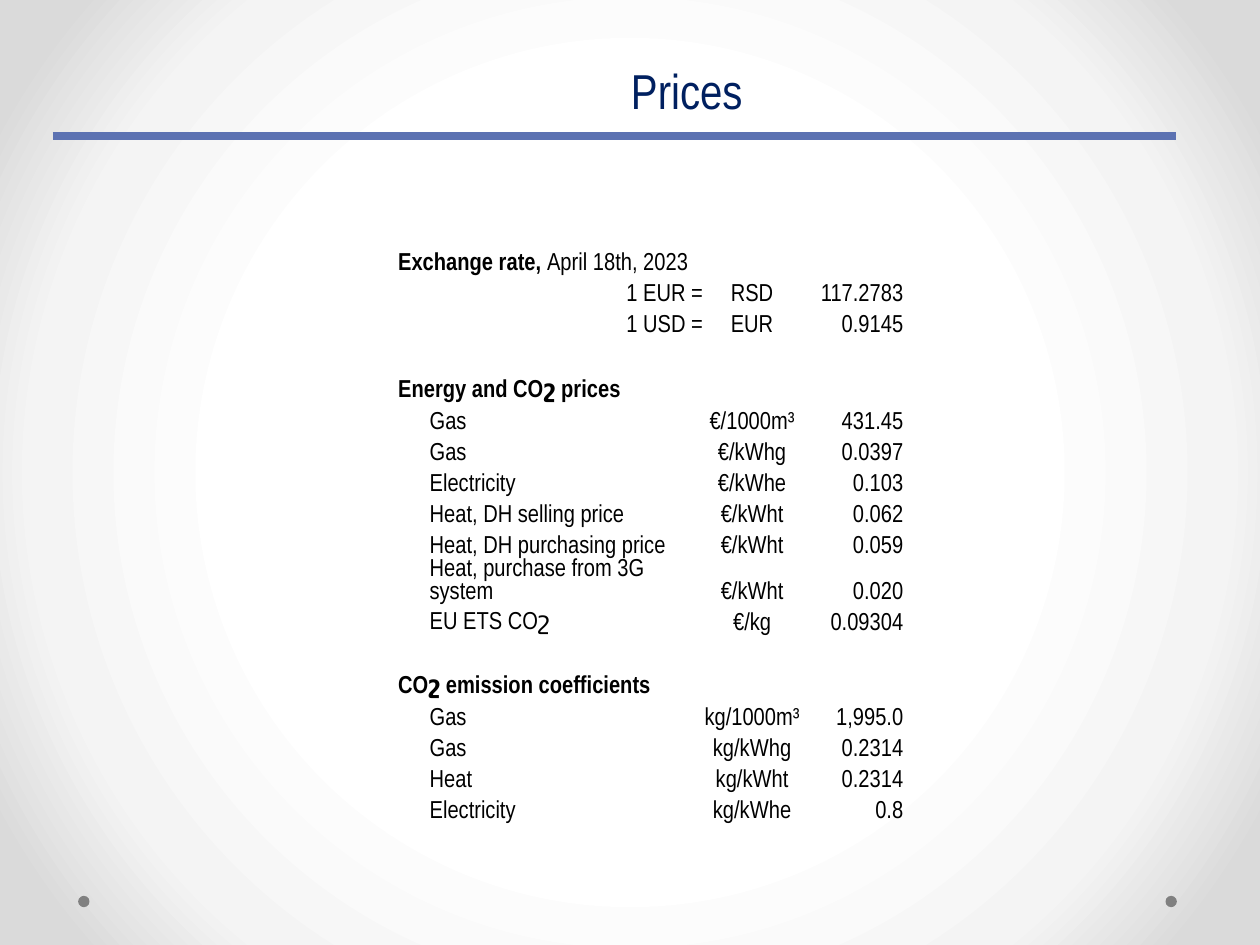
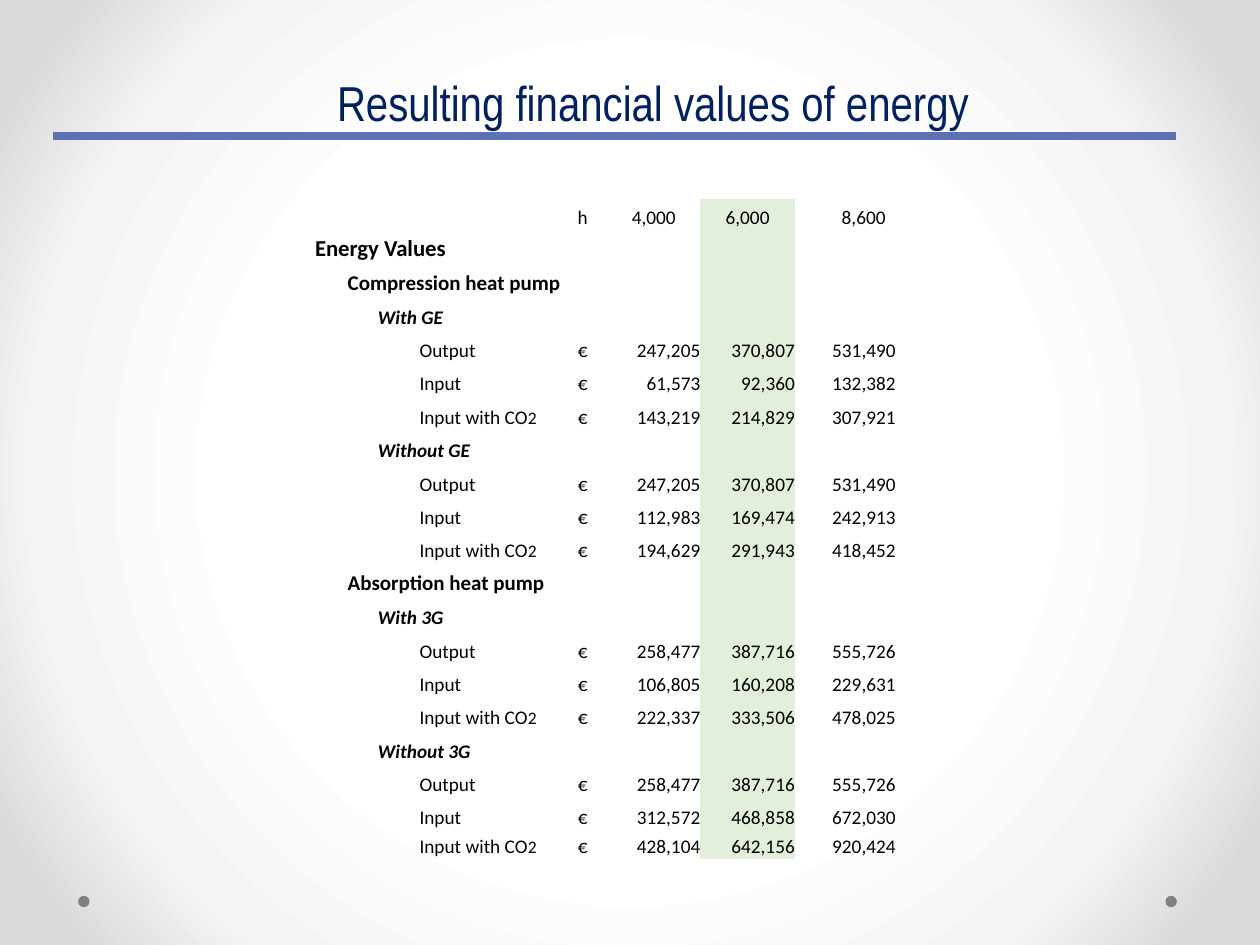
from lxml import etree
from pptx import Presentation
from pptx import util as u
from pptx.dml import color
from pptx.enum import shapes, text
from pptx.oxml import ns, parse_xml

NARROW, CALIBRI = "Arial Narrow", "Calibri"
NAVY, BLUE, GREY, BLACK, GREEN = "002060", "5C72B2", "808080", "000000", "E2EFDA"
BACKDROP = [(0, "FFFFFF"), (50, "FFFFFF"), (76, "F4F4F4"), (92, "DADADA"), (100, "DADADA")]
NO_TABLE_STYLE = "{2D5ABB26-0587-4C30-8999-92F81FD0307C}"
LEFT, CENTER, RIGHT = text.PP_ALIGN.LEFT, text.PP_ALIGN.CENTER, text.PP_ALIGN.RIGHT


def rgb(value):
    return color.RGBColor.from_string(value)


class SlideBuilder:
    """Hold the shared style and the slide being built."""

    def __init__(self):
        self.deck = Presentation()
        self.deck.slide_width, self.deck.slide_height = u.Inches(10), u.Inches(7.5)
        self.page = self.table = None
        self.font, self.size = NARROW, 14
        self.backdrop()

    def backdrop(self):
        master = self.deck.slide_master
        master.background.fill.solid()
        solid = master.element.xpath(".//p:bgPr/a:solidFill")[0]
        stops = "".join(f'<a:gs pos="{place * 1000}"><a:srgbClr val="{shade}"/></a:gs>'
                        for place, shade in BACKDROP)
        gradient = parse_xml(
            f'<a:gradFill {ns.nsdecls("a")} rotWithShape="1"><a:gsLst>{stops}</a:gsLst>'
            '<a:path path="circle"><a:fillToRect l="50000" t="50000" r="50000" b="50000"/>'
            '</a:path></a:gradFill>')
        solid.getparent().replace(solid, gradient)

    def start(self, heading, left, top, width, height):
        self.page = self.deck.slides.add_slide(self.deck.slide_layouts[5])
        for dot_left in (9.25, 0.62):
            self.dot(dot_left, 7.11, 0.09)
        self.title(heading, left, top, width, height)

    def dot(self, left, top, size):
        dot = self.page.shapes.add_shape(shapes.MSO_SHAPE.OVAL, u.Inches(left), u.Inches(top),
                                         u.Inches(size), u.Inches(size))
        dot.shadow.inherit = False
        dot.fill.solid()
        dot.fill.fore_color.rgb = rgb(GREY)
        dot.line.fill.background()

    def title(self, heading, left, top, width, height):
        box = self.page.shapes.title
        box.left, box.top = u.Inches(left), u.Inches(top)
        box.width, box.height = u.Inches(width), u.Inches(height)
        frame = box.text_frame
        frame.text = heading
        frame.auto_size = text.MSO_AUTO_SIZE.NONE
        frame.vertical_anchor = text.MSO_ANCHOR.BOTTOM
        para = frame.paragraphs[0]
        para.alignment, para.line_spacing = CENTER, u.Pt(58)
        self.style(para.runs[0], NARROW, 28, shade=NAVY)

    def rule(self):
        line = self.page.shapes.add_connector(shapes.MSO_CONNECTOR.STRAIGHT, u.Inches(0.42),
                                              u.Inches(1.08), u.Inches(9.33), u.Inches(1.08))
        line.line.color.rgb, line.line.width = rgb(BLUE), u.Pt(4.5)
        etree.SubElement(line.element.spPr, ns.qn("a:effectLst"))

    def style(self, span, font, size, bold=False, italic=False, shade=BLACK):
        span.font.name, span.font.size = font, u.Pt(size)
        span.font.bold, span.font.italic = bold, italic
        span.font.color.rgb = rgb(shade)

    def grid(self, left, top, height, widths, row_count, special_rows, font, size):
        self.font, self.size = font, size
        frame = self.page.shapes.add_table(row_count, len(widths), u.Inches(left), u.Inches(top),
                                           u.Inches(sum(widths)), u.Inches(height))
        frame.element.xpath(".//a:tableStyleId")[0].text = NO_TABLE_STYLE
        self.table = frame.table
        self.table.first_row = self.table.horz_banding = False
        for column, width in zip(self.table.columns, widths):
            column.width = u.Inches(width)
        shared = (height - sum(special_rows.values())) / (row_count - len(special_rows))
        for index, row in enumerate(self.table.rows):
            row.height = u.Inches(special_rows.get(index, shared))
            for cell in row.cells:
                cell.margin_left = cell.margin_right = cell.margin_top = cell.margin_bottom = 0
                cell.vertical_anchor = text.MSO_ANCHOR.BOTTOM
                cell.fill.background()
                para = cell.text_frame.paragraphs[0]
                etree.SubElement(para._p, ns.qn("a:endParaRPr"), sz=str(size * 100))

    def entry(self, row, column, parts, align=LEFT, columns=1):
        cell = self.table.cell(row, column)
        if columns > 1:
            cell.merge(self.table.cell(row, column + columns - 1))
        para = cell.text_frame.paragraphs[0]
        para.alignment = align
        for words, look in [(parts, {})] if isinstance(parts, str) else parts:
            span = para.add_run()
            span.text = words
            self.style(span, **{"font": self.font, "size": self.size, **look})
        return cell

    def shade_column(self, column):
        for row in range(len(self.table.rows)):
            fill = self.table.cell(row, column).fill
            fill.solid()
            fill.fore_color.rgb = rgb(GREEN)


BOLD = {"bold": True}
BOLD_SUBSCRIPT = {"bold": True, "font": CALIBRI}

PRICE_ROWS = [
    ("heading", [("Exchange rate, ", BOLD), ("April 18th, 2023", {})]),
    ("rate", "1 EUR =", "RSD", "117.2783"),
    ("rate", "1 USD =", "EUR", "0.9145"),
    None,
    ("heading", [("Energy and CO", BOLD), ("շ ", BOLD_SUBSCRIPT), ("prices", BOLD)]),
    ("item", "Gas", "€/1000m³", "431.45"),
    ("item", "Gas", "€/kWhg", "0.0397"),
    ("item", "Electricity", "€/kWhe", "0.103"),
    ("item", "Heat, DH selling price", "€/kWht", "0.062"),
    ("item", "Heat, DH purchasing price", "€/kWht", "0.059"),
    ("item", "Heat, purchase from 3G system", "€/kWht", "0.020"),
    ("item", [("EU ETS CO", {}), ("շ", {"font": CALIBRI})], "€/kg", "0.09304"),
    None,
    ("heading", [("CO", BOLD), ("շ ", BOLD_SUBSCRIPT), ("emission coefficients", BOLD)]),
    ("item", "Gas", "kg/1000m³", "1,995.0"),
    ("item", "Gas", "kg/kWhg", "0.2314"),
    ("item", "Heat", "kg/kWht", "0.2314"),
    ("item", "Electricity", "kg/kWhe", "0.8"),
]
PRICE_LABELS = {"heading": (0, LEFT, 4), "item": (1, LEFT, 3), "rate": (3, RIGHT, 1)}

VALUE_LABELS = ["Output", "Input", [("Input with CO", {}), ("2", {"size": 10})]]
PUMPS = [
    ("Compression heat pump", [
        ("With GE", [("247,205", "370,807", "531,490"),
                     ("61,573", "92,360", "132,382"),
                     ("143,219", "214,829", "307,921")]),
        ("Without GE", [("247,205", "370,807", "531,490"),
                        ("112,983", "169,474", "242,913"),
                        ("194,629", "291,943", "418,452")]),
    ]),
    ("Absorption heat pump", [
        ("With 3G", [("258,477", "387,716", "555,726"),
                     ("106,805", "160,208", "229,631"),
                     ("222,337", "333,506", "478,025")]),
        ("Without 3G", [("258,477", "387,716", "555,726"),
                        ("312,572", "468,858", "672,030"),
                        ("428,104", "642,156", "920,424")]),
    ]),
]


def build_prices(builder):
    builder.start("Prices", 0.94, 0.33, 9.02, 0.67)
    builder.grid(3.16, 1.91, 4.51, [0.25, 0.23, 0.32, 1.62, 0.78, 0.81], len(PRICE_ROWS),
                 {0: 0.28, 4: 0.28, 13: 0.26}, NARROW, 14)
    for row, price in enumerate(PRICE_ROWS):
        if price is None:
            continue
        kind, label, *figures = price
        column, align, columns = PRICE_LABELS[kind]
        builder.entry(row, column, label, align, columns)
        for place, figure, side in zip((4, 5), figures, (CENTER, RIGHT)):
            builder.entry(row, place, figure, side)
    builder.rule()


def build_energy_values(builder):
    builder.start("Resulting financial values of energy", 0.67, 0.25, 9.02, 0.84)
    builder.grid(2.5, 1.58, 5.24, [0.26, 0.24, 0.33, 1.1, 0.39, 0.74, 0.75, 0.8], 20,
                 {0: 0.24, 19: 0.23}, CALIBRI, 11)
    builder.shade_column(6)
    for column, hours in enumerate(("h", "4,000", "6,000"), 4):
        builder.entry(0, column, hours, CENTER)
    builder.entry(0, 7, "8,600", RIGHT).margin_right = u.Inches(0.08)
    builder.entry(1, 0, [("Energy Values", {"size": 13, "bold": True})], columns=4)
    row = 2
    for pump, variants in PUMPS:
        builder.entry(row, 1, [(pump, {"size": 12, "bold": True})], columns=4)
        row += 1
        for variant, lines in variants:
            builder.entry(row, 2, [(variant, {"bold": True, "italic": True})], columns=2)
            for row, (label, values) in enumerate(zip(VALUE_LABELS, lines), row + 1):
                builder.entry(row, 3, label)
                builder.entry(row, 4, "€", CENTER)
                for column, value in enumerate(values, 5):
                    builder.entry(row, column, value, RIGHT)
            row += 1
    builder.rule()


def main():
    builder = SlideBuilder()
    build_prices(builder)
    build_energy_values(builder)
    builder.deck.save("out.pptx")


if __name__ == "__main__":
    main()
